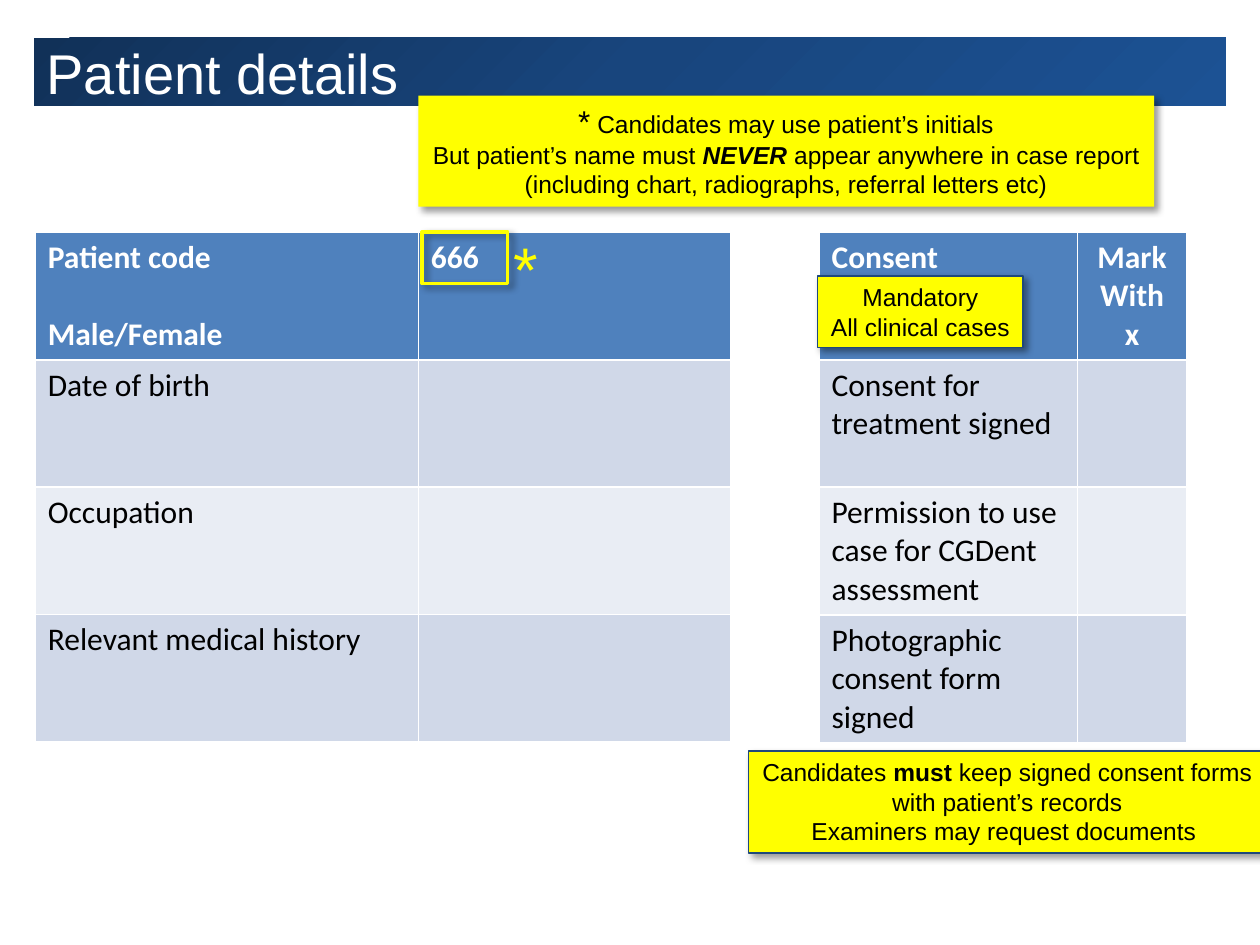
from copy import deepcopy

from lxml import etree
from pptx import Presentation
from pptx.dml.color import RGBColor
from pptx.enum import shapes, text
from pptx.oxml.ns import qn
from pptx.util import Inches, Pt

COLORS = {
    "navy": "113158", "mid": "18457D", "blue": "1C5294", "outline": "1F497B",
    "head": "4F81BD", "band": "D0D8E8", "light": "E9EDF4",
    "yellow": "FFFF00", "white": "FFFFFF", "black": "000000",
}
RGB = {name: RGBColor.from_string(value) for name, value in COLORS.items()}


def add_runs(p, runs, size, color, font="Arial"):
    """Add (text, overrides) runs; overrides may hold size, bold and italic."""
    for words, extra in runs:
        r = p.add_run()
        r.text = words
        r.font.name = font
        r.font.size = Pt(size)
        r.font.color.rgb = RGB[color]
        for key, value in extra.items():
            setattr(r.font, key, value)


def add_box(box, fill=None, line=None, width=0.75):
    """Add a rectangle with a soft shadow to the lower right."""
    sp = s.shapes.add_shape(shapes.MSO_SHAPE.RECTANGLE, *map(Inches, box))
    if fill:
        sp.fill.solid()
        sp.fill.fore_color.rgb = RGB[fill]
    else:
        sp.fill.background()
    if line:
        sp.line.color.rgb = RGB[line]
        sp.line.width = Pt(width)
    else:
        sp.line.fill.background()
    sp.shadow.inherit = False
    effects = sp._element.spPr.find(qn("a:effectLst"))
    shadow = etree.SubElement(effects, qn("a:outerShdw"), blurRad=str(Pt(4)),
                              dist=str(Pt(3)), dir="2700000", algn="tl", rotWithShape="0")
    color = etree.SubElement(shadow, qn("a:srgbClr"), val=COLORS["black"])
    etree.SubElement(color, qn("a:alpha"), val="40000")
    return sp


prs = Presentation()
prs.slide_width, prs.slide_height = Inches(10), Inches(7.5)
s = prs.slides.add_slide(prs.slide_layouts[5])

# Title bar
title = s.shapes.title
title.left, title.top, title.width, title.height = map(Inches, (0.27, 0.3, 9.46, 0.54))
title.fill.gradient()
title.fill.gradient_angle = 315
stop_list = title._element.spPr.find(".//" + qn("a:gsLst"))
stop_list.insert(1, deepcopy(stop_list[0]))
for stop, position, name in zip(title.fill.gradient_stops, (0, 0.5, 1), ("navy", "mid", "blue")):
    stop.position = position
    stop.color.rgb = RGB[name]
tf = title.text_frame
tf.auto_size = text.MSO_AUTO_SIZE.NONE
tf.vertical_anchor = text.MSO_ANCHOR.MIDDLE
p = tf.paragraphs[0]
p.alignment = text.PP_ALIGN.LEFT
add_runs(p, [("Patient details", {})], 32, "white")

# Tables: left edge, column widths, rows of cells, each cell a list of paragraphs
tables = [
    (0.28, (3.04, 2.48), [
        (["Patient code", "Male/Female"], ["666"]),
        (["Date of birth"], []),
        (["Occupation"], []),
        (["Relevant medical history"], []),
    ]),
    (6.5, (2.05, 0.87), [
        (["Consent"], ["Mark", "With", "x"]),
        (["Consent for treatment signed"], []),
        (["Permission to use case for CGDent assessment"], []),
        (["Photographic consent form signed"], []),
    ]),
]
ROW_HEIGHT = 1.01
row_fills = ("head", "band", "light", "band")
grids = []
for left, widths, rows in tables:
    table = s.shapes.add_table(len(rows), len(widths), Inches(left), Inches(1.84),
                               Inches(sum(widths)), Inches(ROW_HEIGHT * len(rows))).table
    grids.append(table)
    for column, width in zip(table.columns, widths):
        column.width = Inches(width)
    for i, row in enumerate(rows):
        table.rows[i].height = Inches(ROW_HEIGHT)
        for j, lines in enumerate(row):
            cell = table.cell(i, j)
            cell.fill.solid()
            cell.fill.fore_color.rgb = RGB[row_fills[i]]
            tf = cell.text_frame
            for k, line in enumerate(lines):
                p = tf.add_paragraph() if k else tf.paragraphs[0]
                add_runs(p, [(line, {"bold": i == 0})], 18,
                         "black" if i else "white", "Calibri")

patient_table, consent_table = grids
patient_table.cell(0, 0).text_frame.paragraphs[1].space_before = Pt(22)
for p in consent_table.cell(0, 1).text_frame.paragraphs:
    p.alignment = text.PP_ALIGN.CENTER

# Frame and asterisk beside the patient code
add_box((3.35, 1.84, 0.68, 0.41), line="yellow", width=2)
star = s.shapes.add_textbox(*map(Inches, (3.98, 1.77, 0.4, 0.71)))
star.text_frame.word_wrap = False
add_runs(star.text_frame.paragraphs[0], [("*", {})], 36, "yellow")

# Yellow notes
notes = [
    ((3.32, 0.76, 5.84, 0.88), None, [
        [("*", {"size": Pt(18)}), (" Candidates may use patient’s initials", {})],
        [("But patient’s name must ", {}), ("NEVER", {"bold": True, "italic": True}),
         (" appear anywhere in case report", {})],
        [("(including chart, radiographs, referral letters etc)", {})],
    ]),
    ((6.49, 2.19, 1.63, 0.57), "outline", [
        [("Mandatory", {})],
        [("All clinical cases", {})],
    ]),
    ((5.94, 5.96, 4.11, 0.81), "outline", [
        [("Candidates ", {}), ("must", {"bold": True}), (" keep signed consent forms", {})],
        [("with patient’s records", {})],
        [("Examiners may request documents ", {})],
    ]),
]
for box, line, paragraphs in notes:
    tf = add_box(box, "yellow", line).text_frame
    tf.word_wrap = False
    tf.auto_size = text.MSO_AUTO_SIZE.SHAPE_TO_FIT_TEXT
    tf.vertical_anchor = text.MSO_ANCHOR.TOP
    for k, runs in enumerate(paragraphs):
        p = tf.add_paragraph() if k else tf.paragraphs[0]
        p.alignment = text.PP_ALIGN.CENTER
        add_runs(p, runs, 14, "black")

prs.save("out.pptx")
